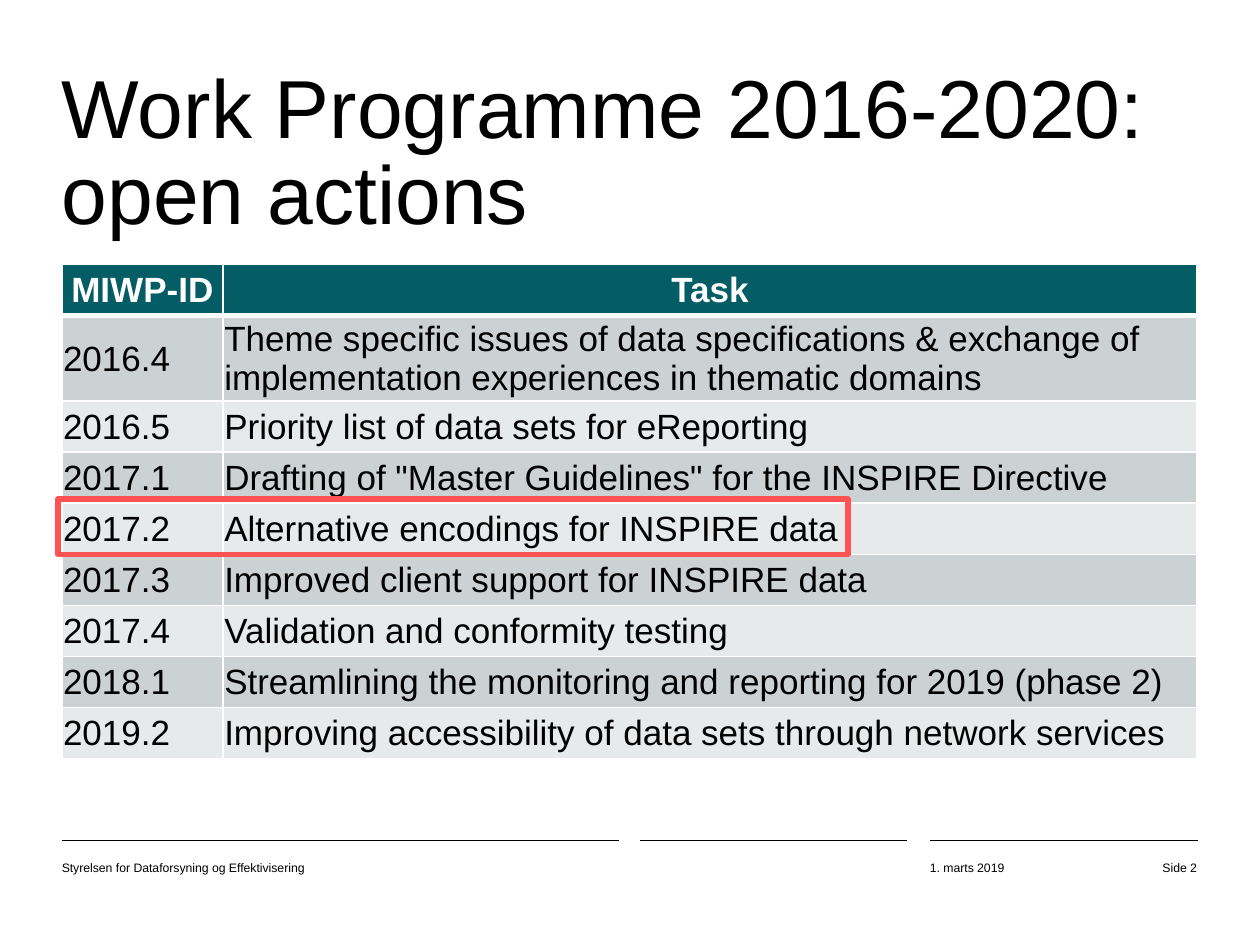
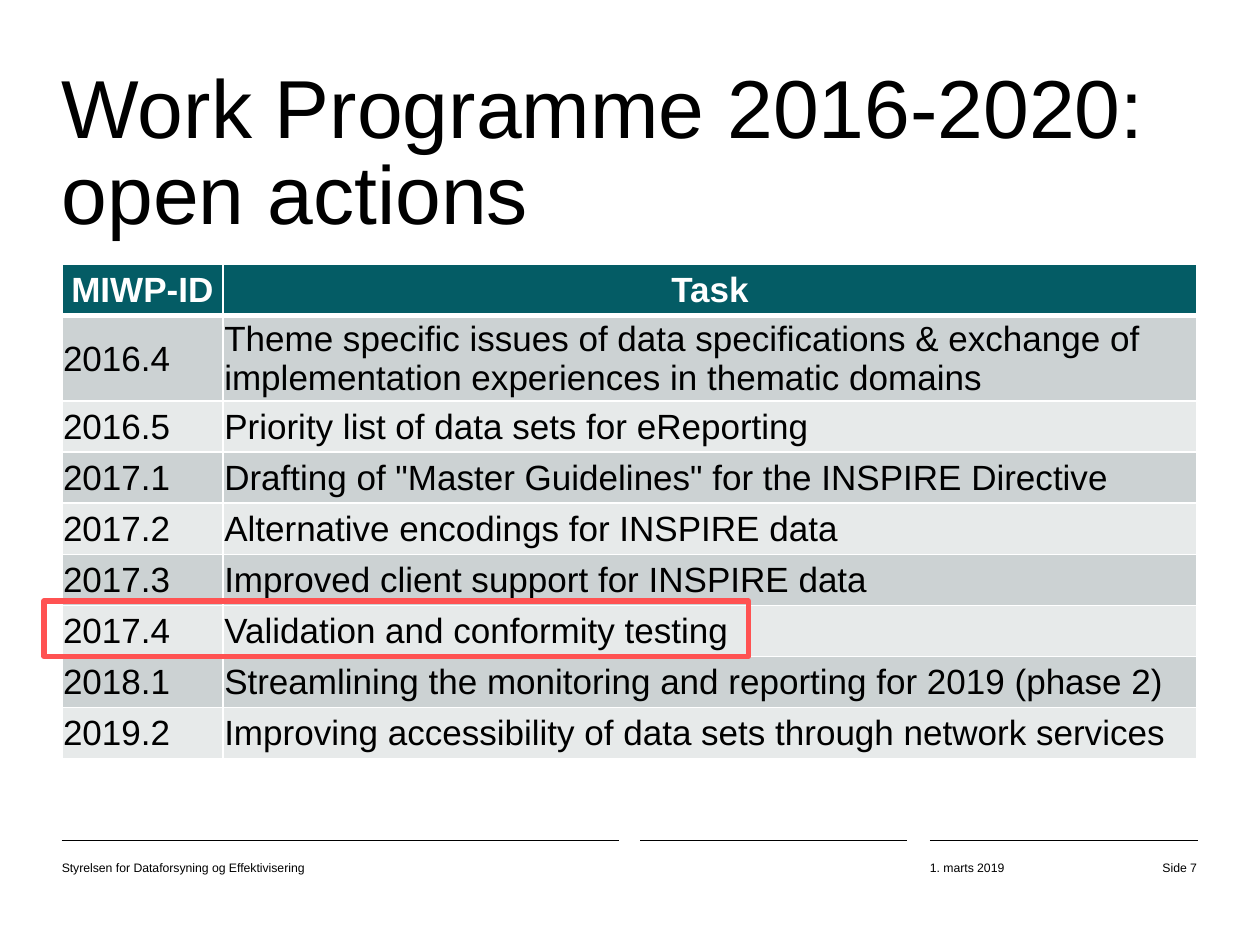
from typing import NamedTuple

from lxml.etree import SubElement
from pptx import Presentation
from pptx.dml.color import RGBColor
from pptx.enum.shapes import MSO_CONNECTOR as Connector, MSO_SHAPE as Shape
from pptx.enum.text import MSO_ANCHOR as Anchor, PP_ALIGN as Align
from pptx.oxml.ns import qn
from pptx.util import Inches, Pt

COLORS = {
    "text": "000000",
    "white": "FFFFFF",
    "header": "045C65",
    "band_dark": "CCD2D3",
    "band_light": "E7EAEA",
    "highlight": "FF5252",
}
FONT = "Arial"
TITLE = "Work Programme 2016-2020: open actions"
LEFT = 0.49
WIDTH = 9.01
RULE_TOP = 6.67
FOOTER_TOP = 6.83
FOOTER_RULES = [(LEFT, 4.91), (5.08, 7.2), (7.38, 9.51)]
COLUMN_WIDTHS = [1.28, 7.73]
TASKS = [
    ("MIWP-ID", "Task"),
    ("2016.4", "Theme specific issues of data specifications & exchange of "
               "implementation experiences in thematic domains"),
    ("2016.5", "Priority list of data sets for eReporting"),
    ("2017.1", 'Drafting of "Master Guidelines" for the INSPIRE Directive'),
    ("2017.2", "Alternative encodings for INSPIRE data"),
    ("2017.3", "Improved client support for INSPIRE data"),
    ("2017.4", "Validation and conformity testing"),
    ("2018.1", "Streamlining the monitoring and reporting for 2019 (phase 2)"),
    ("2019.2", "Improving accessibility of data sets through network services"),
]


class Area(NamedTuple):
    left: float
    top: float
    width: float
    height: float

    def lengths(self) -> list:
        return [Inches(value) for value in self]


class ActionPage(NamedTuple):
    number: int
    highlight: Area


PAGES = [
    ActionPage(2, Area(0.46, 3.96, 6.27, 0.44)),
    ActionPage(7, Area(0.35, 4.77, 5.59, 0.44)),
]


def color(name: str) -> RGBColor:
    return RGBColor.from_string(COLORS[name])


def write_text(frame, text: str, *, size: float, fill: str = "text", bold: bool = False,
               align=Align.LEFT, line_spacing=None) -> None:
    para = frame.paragraphs[0]
    para.alignment = align
    if line_spacing:
        para.line_spacing = line_spacing
    span = para.add_run()
    span.text = text
    span.font.name = FONT
    span.font.size = Pt(size)
    span.font.bold = bold
    span.font.color.rgb = color(fill)


def add_text(page, area: Area, text: str, **text_format) -> None:
    frame = page.shapes.add_textbox(*area.lengths()).text_frame
    frame.word_wrap = True
    frame.margin_left = frame.margin_top = frame.margin_right = frame.margin_bottom = 0
    write_text(frame, text, **text_format)


def add_footer(page, number: int) -> None:
    for start, end in FOOTER_RULES:
        rule = page.shapes.add_connector(
            Connector.STRAIGHT, Inches(start), Inches(RULE_TOP), Inches(end), Inches(RULE_TOP))
        rule.line.color.rgb = color("text")
        rule.line.width = Pt(0.5)
        SubElement(rule._element.spPr, qn("a:effectLst"))
    add_text(page, Area(7.38, FOOTER_TOP, 1.25, 0.4), "1. marts 2019", size=7)
    add_text(page, Area(LEFT, FOOTER_TOP, 4.42, 0.4),
             "Styrelsen for Dataforsyning og Effektivisering", size=7)
    add_text(page, Area(8.7, FOOTER_TOP, 0.8, 0.4), f"Side {number}", size=7, align=Align.RIGHT)


def set_borders(cell, **widths: float) -> None:
    properties = cell._tc.get_or_add_tcPr()
    for side in ("L", "R", "T", "B"):
        border = SubElement(properties, qn(f"a:ln{side}"), w=str(Pt(widths.get(side, 1))))
        paint = SubElement(border, qn("a:solidFill"))
        SubElement(paint, qn("a:srgbClr"), val=COLORS["white"])


def add_task_table(page) -> None:
    area = Area(LEFT, 2.1, WIDTH, 3.65)
    table = page.shapes.add_table(len(TASKS), len(COLUMN_WIDTHS), *area.lengths()).table
    table.first_row = table.horz_banding = False
    for column, width in zip(table.columns, COLUMN_WIDTHS):
        column.width = Inches(width)
    for row, task in enumerate(TASKS):
        is_header = row == 0
        band = "header" if is_header else "band_dark" if row % 2 else "band_light"
        for column, text in enumerate(task):
            cell = table.cell(row, column)
            cell.vertical_anchor = Anchor.MIDDLE
            cell.margin_left = cell.margin_top = cell.margin_right = Inches(0.01)
            cell.margin_bottom = 0
            set_borders(cell, T=3 if row == 1 else 1, B=3 if is_header else 1)
            cell.fill.solid()
            cell.fill.fore_color.rgb = color(band)
            write_text(cell.text_frame, text, size=20, bold=is_header,
                       fill="white" if is_header else "text",
                       align=Align.CENTER if is_header else Align.LEFT)


def add_highlight(page, area: Area) -> None:
    box = page.shapes.add_shape(Shape.RECTANGLE, *area.lengths())
    box.shadow.inherit = False
    box.fill.background()
    box.line.color.rgb = color("highlight")
    box.line.width = Pt(3)


def main() -> None:
    deck = Presentation()
    deck.slide_width = Inches(10)
    deck.slide_height = Inches(7.5)
    for action_page in PAGES:
        page = deck.slides.add_slide(deck.slide_layouts[6])
        add_text(page, Area(LEFT, 0.55, WIDTH, 1.42), TITLE, size=47, line_spacing=Pt(49.1))
        add_footer(page, action_page.number)
        add_task_table(page)
        add_highlight(page, action_page.highlight)
    deck.save("out.pptx")


if __name__ == "__main__":
    main()
